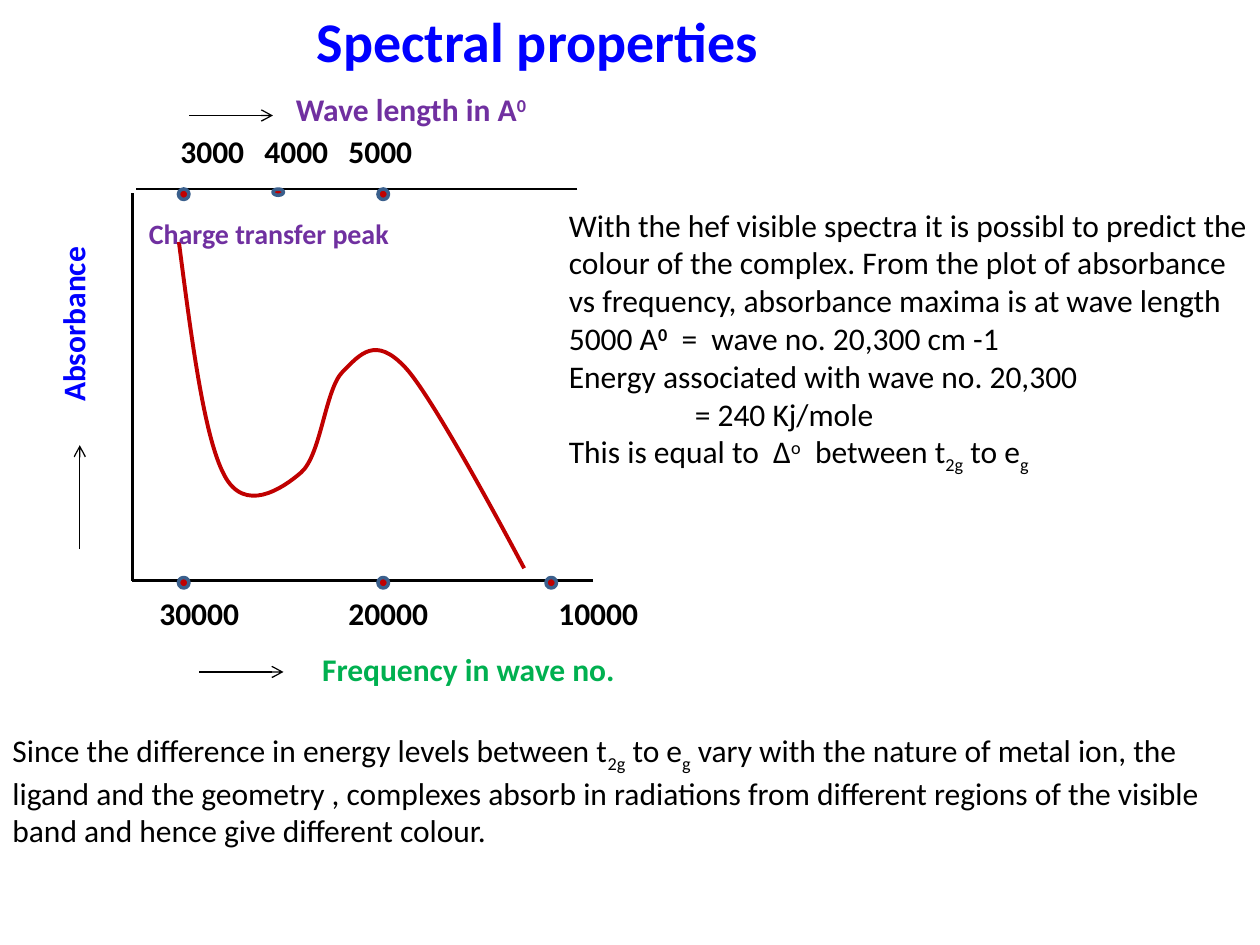
from lxml.etree import SubElement
from pptx import Presentation
from pptx.dml.color import RGBColor
from pptx.enum.shapes import MSO_CONNECTOR, MSO_SHAPE
from pptx.enum.text import MSO_AUTO_SIZE
from pptx.oxml.ns import qn
from pptx.util import Inches, Pt

CELL = 1 / 12  # grid of 120 columns by 90 rows
BLACK, BLUE, PURPLE, GREEN = "000000", "0000FF", "7030A0", "00B050"
RED, STEEL = "C00000", "3A5F8C"
SUP, SUB = 30, -25


def grid(*cells):
    return [Inches(c * CELL) for c in cells]


def color(hex_value):
    return RGBColor.from_string(hex_value)


def set_line(sp, hex_value, width):
    sp.line.color.rgb = color(hex_value)
    sp.line.width = Pt(width)


def add_tab_stop(p, position):
    tabs = SubElement(p._p.get_or_add_pPr(), qn("a:tabLst"))
    SubElement(tabs, qn("a:tab"), pos=str(position), algn="l")


def add_text(slide, box, *paragraphs, size=18, fill=BLACK, bold=True,
             wrap=False, rotation=0, tab=None):
    """Each paragraph is a list of runs: a string or (string, baseline, bold)."""
    sp = slide.shapes.add_textbox(*grid(*box))
    sp.rotation = rotation
    tf = sp.text_frame
    tf.word_wrap = wrap
    tf.auto_size = MSO_AUTO_SIZE.SHAPE_TO_FIT_TEXT
    for i, runs in enumerate(paragraphs):
        p = tf.add_paragraph() if i else tf.paragraphs[0]
        if tab:
            add_tab_stop(p, tab)
        for run in runs:
            text, base, heavy = (run, 0, bold) if isinstance(run, str) else run
            r = p.add_run()
            r.text = text
            r.font.name = "Calibri"
            r.font.size = Pt(size)
            r.font.bold = heavy
            r.font.color.rgb = color(fill)
            if base:
                r._r.get_or_add_rPr().set("baseline", str(base * 1000))


def add_line(slide, start, end, width=1.5, arrow=False):
    cxn = slide.shapes.add_connector(MSO_CONNECTOR.STRAIGHT, *grid(*start, *end))
    set_line(cxn, BLACK, width)
    if arrow:
        SubElement(cxn.line._get_or_add_ln(), qn("a:tailEnd"), type="arrow")
    SubElement(cxn._element.spPr, qn("a:effectLst"))


def add_marker(slide, col, row, height=1):
    sp = slide.shapes.add_shape(MSO_SHAPE.OVAL, *grid(col, row, 1, height))
    sp.shadow.inherit = False
    sp.fill.solid()
    sp.fill.fore_color.rgb = color(RED)
    set_line(sp, STEEL, 2)


def add_curve(slide, points):
    """Smooth curve in inches: after the start, three points per Bezier segment."""
    start, *rest = [(Inches(x), Inches(y)) for x, y in points]
    builder = slide.shapes.build_freeform(*start)
    builder.add_line_segments(rest, close=False)
    sp = builder.convert_to_shape()
    sp.shadow.inherit = False
    sp.fill.background()
    set_line(sp, RED, 2.25)
    path = next(sp._element.iter(qn("a:path")))
    segments = path.findall(qn("a:lnTo"))
    for i in range(0, len(segments), 3):
        bezier = SubElement(path, qn("a:cubicBezTo"))
        for segment in segments[i:i + 3]:
            bezier.append(segment[0])
            path.remove(segment)


def add_plot(slide):
    add_curve(slide, [
        (1.42, 1.92),
        (1.52, 2.69), (1.62, 3.47), (1.78, 3.77),
        (1.94, 4.08), (2.24, 3.88), (2.39, 3.75),
        (2.55, 3.61), (2.58, 3.09), (2.72, 2.95),
        (2.86, 2.81), (2.98, 2.66), (3.22, 2.92),
        (3.46, 3.18), (4.16, 4.51), (4.16, 4.51)])
    add_line(slide, (12.6, 18.4), (12.6, 55.3))
    add_line(slide, (56.5, 55.3), (12.6, 55.3))
    add_line(slide, (55, 18), (13, 18))
    for start, end in (((7.6, 52.3), (7.6, 42.4)),
                       ((19, 64), (27, 64)),
                       ((18, 11), (26, 11))):
        add_line(slide, start, end, width=0.75, arrow=True)

    for col in (17, 36, 52):
        add_marker(slide, col, 55)
    for col, height in ((26, 0.6), (17, 1), (36, 1)):
        add_marker(slide, col, 18, height)
    for col, label in ((14, "30000"), (32, "20000"), (52, "10000")):
        add_text(slide, (col, 56, 10.1, 4.8), [label])
    for col, label in ((16, "3000"), (24, "4000"), (32, "5000")):
        add_text(slide, (col, 12, 8.5, 4.8), [label])

    add_text(slide, (29.5, 61.3, 30.5, 4.8), ["Frequency in wave no."], fill=GREEN)
    add_text(slide, (-1.7, 28.4, 17.3, 4.8), ["Absorbance"], fill=BLUE, rotation=270)
    add_text(slide, (27, 8, 24.7, 4.8), ["Wave length in A", ("0", SUP, True)],
             fill=PURPLE)
    add_text(slide, (13, 20, 25.6, 4.4), ["Charge transfer peak"], size=16,
             fill=PURPLE)


def main():
    prs = Presentation()
    prs.slide_width, prs.slide_height = grid(120, 90)
    slide = prs.slides.add_slide(prs.slide_layouts[6])
    levels = [("2g", SUB, False), " to e", ("g", SUB, False)]

    add_plot(slide)
    add_text(slide, (29, 0, 46.1, 7.7), ["Spectral properties"], size=32, fill=BLUE)
    add_text(
        slide, (53, 19, 67, 26.6),
        ["With the hef visible spectra it is possibl to predict the colour of the "
         "complex. From the plot of absorbance vs frequency, absorbance maxima is "
         "at wave length 5000 A", ("0", SUP, True), "  =  wave no. 20,300 cm -1"],
        ["Energy associated with wave no. 20,300"],
        ["\t= 240 Kj/mole"],
        ["This is equal to  Δ", ("o", SUP, False), "  between t", *levels],
        bold=False, wrap=True, tab=Inches(1))
    add_text(
        slide, (0, 69, 117, 12.2),
        ["Since the difference in energy levels between t", *levels,
         " vary with the nature of metal ion, the ligand and the geometry , "
         "complexes absorb in radiations from different regions of the visible "
         "band and hence give different colour."],
        bold=False, wrap=True)
    prs.save("out.pptx")


if __name__ == "__main__":
    main()
